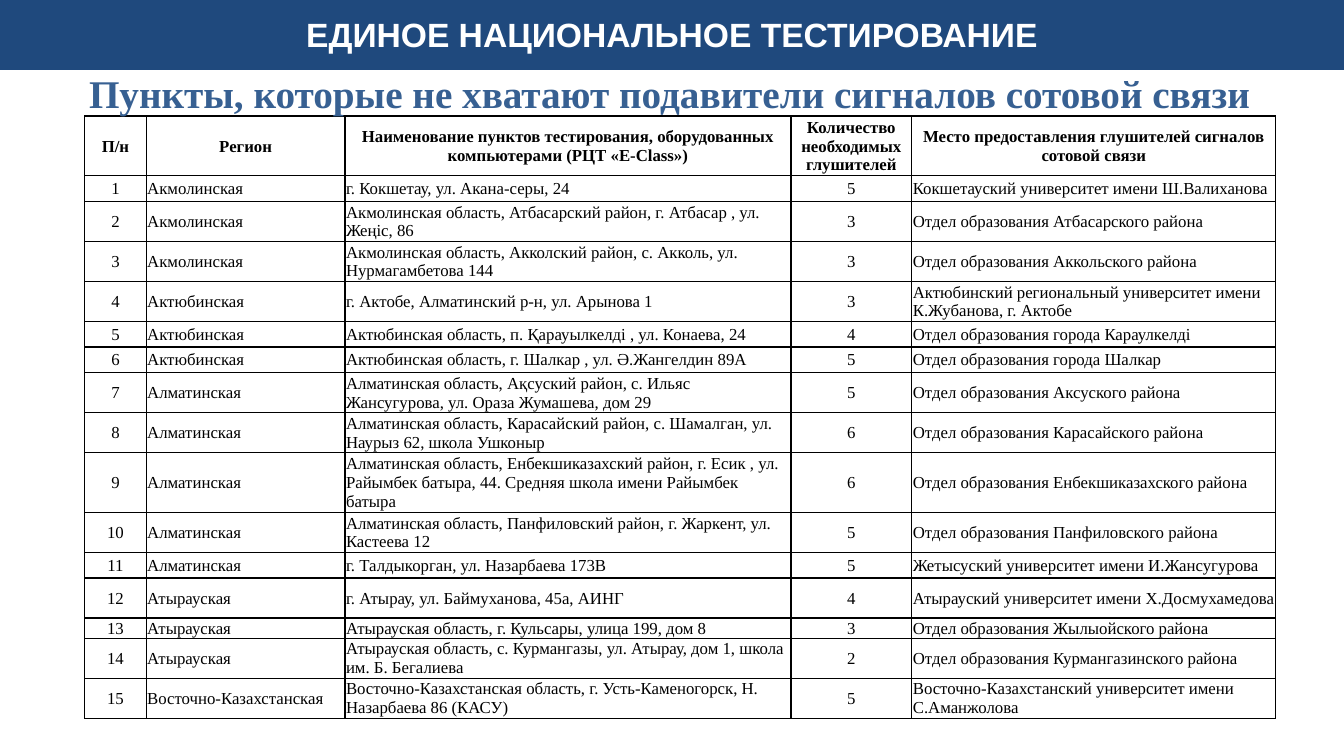
from dataclasses import dataclass

from lxml.etree import SubElement
from pptx import Presentation
from pptx.dml.color import RGBColor
from pptx.enum.shapes import MSO_SHAPE as Shape
from pptx.enum.text import MSO_ANCHOR as Anchor, PP_ALIGN as Align
from pptx.oxml.ns import qn
from pptx.util import Pt


@dataclass(frozen=True)
class Theme:
    banner: str = "1F497D"
    heading: str = "376092"
    ink: str = "000000"
    paper: str = "FFFFFF"
    sans: str = "Arial"
    serif: str = "Times New Roman"
    banner_size: float = 24
    heading_size: float = 28
    table_size: float = 12
    border: float = 1


BANNER = "ЕДИНОЕ НАЦИОНАЛЬНОЕ ТЕСТИРОВАНИЕ"
HEADING = "Пункты, которые не хватают подавители сигналов сотовой связи"

COLUMNS = [
    ("П/н", 44, Align.CENTER),
    ("Регион", 142, Align.LEFT),
    ("Наименование пунктов тестирования, оборудованных компьютерами (РЦТ «E-Class»)",
     318.5, Align.LEFT),
    ("Количество необходимых глушителей", 86.4, Align.CENTER),
    ("Место предоставления глушителей сигналов сотовой связи", 260, Align.LEFT),
]

TIGHT, SINGLE, DOUBLE, TRIPLE = 14.4, 18.3, 28.6, 42.7

# Row height, testing site, jammers needed, provider
SITES = {
    "Акмолинская": [
        (SINGLE, "г. Кокшетау, ул. Акана-серы, 24", 5,
         "Кокшетауский университет имени Ш.Валиханова"),
        (DOUBLE, "Акмолинская область, Атбасарский район, г. Атбасар , ул. Жеңіс, 86", 3,
         "Отдел образования Атбасарского района"),
        (DOUBLE, "Акмолинская область, Акколский район, с. Акколь, ул. Нурмагамбетова 144", 3,
         "Отдел образования Аккольского района"),
    ],
    "Актюбинская": [
        (DOUBLE, "г. Актобе, Алматинский р-н, ул. Арынова 1", 3,
         "Актюбинский региональный университет имени К.Жубанова, г. Актобе"),
        (SINGLE, "Актюбинская область, п. Қарауылкелді , ул. Конаева, 24", 4,
         "Отдел образования города Караулкелді"),
        (SINGLE, "Актюбинская область, г. Шалкар , ул. Ә.Жангелдин 89А", 5,
         "Отдел образования города Шалкар"),
    ],
    "Алматинская": [
        (DOUBLE, "Алматинская область, Ақсуский район, с. Ильяс Жансугурова, "
                 "ул. Ораза Жумашева, дом 29", 5,
         "Отдел образования Аксуского района"),
        (DOUBLE, "Алматинская область, Карасайский район, с. Шамалган, "
                 "ул. Наурыз 62, школа Ушконыр", 6,
         "Отдел образования Карасайского района"),
        (TRIPLE, "Алматинская область, Енбекшиказахский район, г. Есик , "
                 "ул. Райымбек батыра, 44. Средняя школа имени Райымбек батыра", 6,
         "Отдел образования Енбекшиказахского района"),
        (DOUBLE, "Алматинская область, Панфиловский район, г. Жаркент, ул. Кастеева 12", 5,
         "Отдел образования Панфиловского района"),
        (SINGLE, "г. Талдыкорган, ул. Назарбаева 173В", 5,
         "Жетысуский университет имени И.Жансугурова"),
    ],
    "Атырауская": [
        (DOUBLE, "г. Атырау, ул. Баймуханова, 45а, АИНГ", 4,
         "Атырауский университет имени Х.Досмухамедова"),
        (TIGHT, "Атырауская область, г. Кульсары, улица 199, дом 8", 3,
         "Отдел образования Жылыойского района"),
        (DOUBLE, "Атырауская область, с. Курмангазы, ул. Атырау, дом 1, "
                 "школа им. Б. Бегалиева", 2,
         "Отдел образования Курмангазинского района"),
    ],
    "Восточно-Казахстанская": [
        (DOUBLE, "Восточно-Казахстанская область, г. Усть-Каменогорск, "
                 "Н. Назарбаева 86 (КАСУ)", 5,
         "Восточно-Казахстанский университет имени С.Аманжолова"),
    ],
}


class SlideBuilder:
    def __init__(self, slide, theme):
        self.slide = slide
        self.theme = theme

    def set_text(self, frame, text, font_name, size, color, bold=True, align=Align.CENTER):
        frame.text = text
        frame.word_wrap = True
        paragraph = frame.paragraphs[0]
        paragraph.alignment = align
        font = paragraph.runs[0].font
        font.name, font.size, font.bold = font_name, Pt(size), bold
        font.color.rgb = RGBColor.from_string(color)

    def banner(self, text, left, top, width, height):
        look = self.theme
        bar = self.slide.shapes.add_shape(
            Shape.RECTANGLE, Pt(left), Pt(top), Pt(width), Pt(height))
        bar.shadow.inherit = False
        bar.fill.solid()
        bar.fill.fore_color.rgb = RGBColor.from_string(look.banner)
        bar.line.color.rgb = RGBColor.from_string(look.banner)
        bar.line.width = Pt(2)
        bar.text_frame.vertical_anchor = Anchor.MIDDLE
        self.set_text(bar.text_frame, text, look.sans, look.banner_size, look.paper)

    def heading(self, text, left, top, width, height):
        look = self.theme
        frame = self.slide.shapes.add_textbox(
            Pt(left), Pt(top), Pt(width), Pt(height)).text_frame
        frame.vertical_anchor = Anchor.MIDDLE
        frame.margin_right = Pt(14.2)
        self.set_text(frame, text, look.serif, look.heading_size, look.heading)

    def outline(self, cell):
        """Draw all four borders; they precede the fill in the cell properties."""
        properties = cell._tc.get_or_add_tcPr()
        for side in ("a:lnL", "a:lnR", "a:lnT", "a:lnB"):
            edge = SubElement(properties, qn(side), w=str(Pt(self.theme.border)))
            fill = SubElement(edge, qn("a:solidFill"))
            SubElement(fill, qn("a:srgbClr"), val=self.theme.ink)

    def table(self, columns, rows, left, top):
        """Draw a bold heading row, then rows given as (height, values)."""
        look = self.theme
        titles, widths, aligns = zip(*columns)
        lines = [(TRIPLE, titles), *rows]
        total = sum(height for height, _ in lines)
        grid = self.slide.shapes.add_table(
            len(lines), len(columns), Pt(left), Pt(top), Pt(sum(widths)), Pt(total)).table
        grid.first_row = grid.horz_banding = False
        for column, width in zip(grid.columns, widths):
            column.width = Pt(width)
        for index, (height, values) in enumerate(lines):
            grid.rows[index].height = Pt(height)
            is_title = index == 0
            for cell, value, align in zip(grid.rows[index].cells, values, aligns):
                self.outline(cell)
                cell.fill.background()
                cell.vertical_anchor = Anchor.MIDDLE
                cell.margin_left = cell.margin_right = cell.margin_top = Pt(0.7)
                cell.margin_bottom = 0
                self.set_text(cell.text_frame, str(value), look.serif, look.table_size,
                              look.ink, is_title, Align.CENTER if is_title else align)


def numbered_rows():
    entries = [(region, *site) for region, sites in SITES.items() for site in sites]
    return [(height, (number, region, place, jammers, provider))
            for number, (region, height, place, jammers, provider)
            in enumerate(entries, start=1)]


def main():
    deck = Presentation()
    deck.slide_width, deck.slide_height = Pt(960), Pt(540)
    builder = SlideBuilder(deck.slides.add_slide(deck.slide_layouts[6]), Theme())
    builder.banner(BANNER, 0, 0, 960, 49)
    builder.table(COLUMNS, numbered_rows(), 60.5, 82.9)
    builder.heading(HEADING, 49.7, 21, 864, 90)
    deck.save("out.pptx")


if __name__ == "__main__":
    main()
